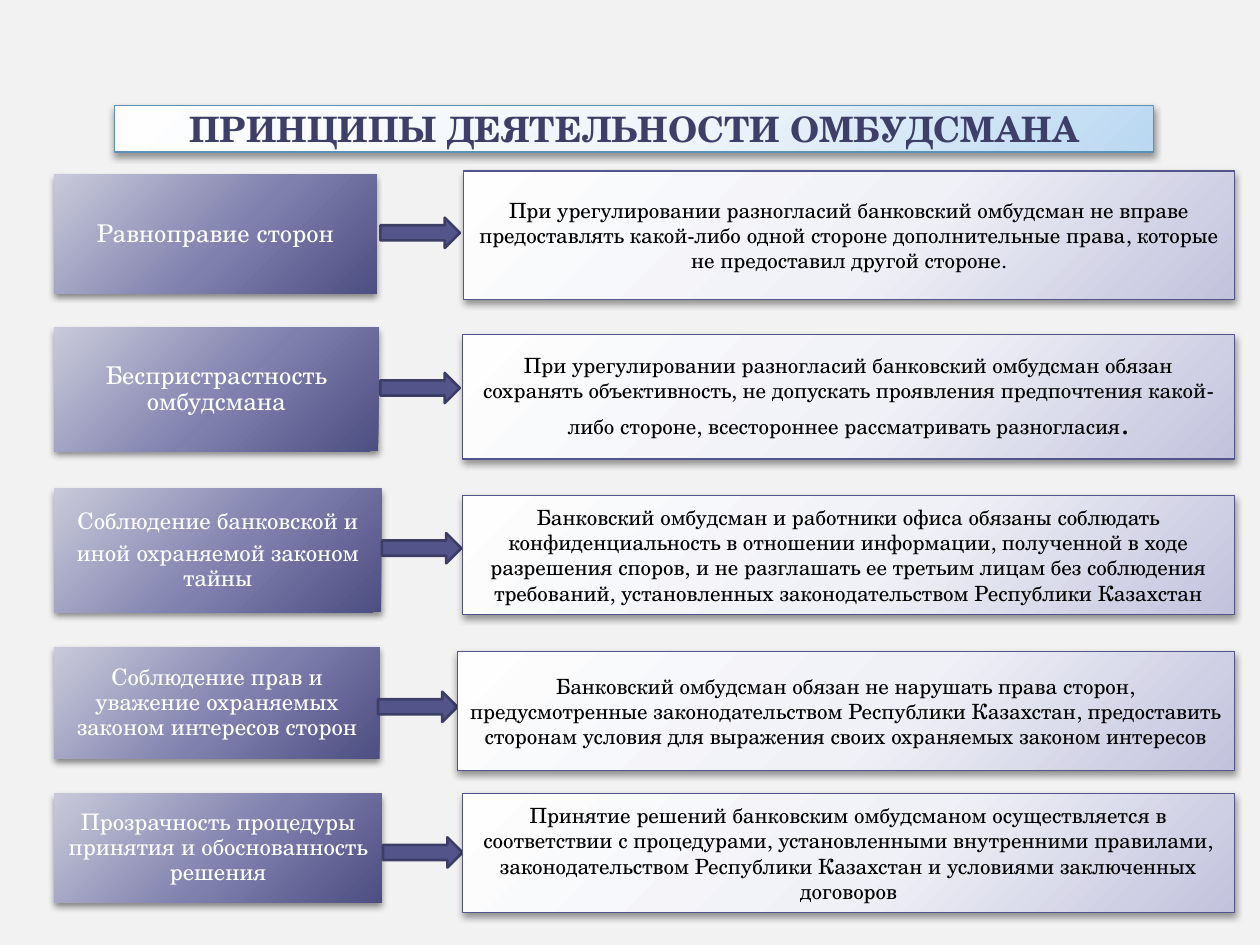
from pptx import Presentation
from pptx.dml.color import RGBColor
from pptx.enum.shapes import MSO_SHAPE as SHAPE
from pptx.enum.text import MSO_ANCHOR as ANCHOR, PP_ALIGN as ALIGN
from pptx.oxml import parse_xml
from pptx.oxml.ns import nsdecls
from pptx.util import Pt

FONT = "TeX Gyre Schola"
PAGE = RGBColor(0xF2, 0xF2, 0xF2)
WHITE = RGBColor(0xFF, 0xFF, 0xFF)
BLACK = RGBColor(0x00, 0x00, 0x00)
INK = RGBColor(0x3E, 0x3F, 0x68)
VIOLET = RGBColor(0x53, 0x54, 0x8A)
DEEP = RGBColor(0x3D, 0x3E, 0x66)
BLUE = RGBColor(0x5C, 0x92, 0xB5)
TITLE_GRAD = (RGBColor(0xFE, 0xFE, 0xFF), RGBColor(0xEF, 0xF5, 0xFB), RGBColor(0xBA, 0xD8, 0xF2))
LABEL_GRAD = (RGBColor(0xC9, 0xC9, 0xDA), RGBColor(0x7F, 0x80, 0xAE), RGBColor(0x4D, 0x4E, 0x81))
CARD_GRAD = (RGBColor(0xFE, 0xFE, 0xFE), RGBColor(0xF0, 0xF1, 0xF7), RGBColor(0xC2, 0xC2, 0xDD))

LABEL_LEFT, CARD_RIGHT = 31, 705.6
ARROW_SIZE = (45.4, 17.3)

ROWS = [
    {"label": ["Равноправие сторон"], "size": 14,
     "label_box": (100, 184.4, 67.8), "arrow": (217.4, 124.4), "card_box": (265, 97.7, 73.4),
     "card": [["При урегулировании разногласий банковский омбудсман не вправе предоставлять "
               "какой-либо одной стороне дополнительные права, которые не предоставил другой стороне."]]},
    {"label": ["Беспристрастность омбудсмана"], "size": 14,
     "label_box": (187.2, 185.3, 70.6), "arrow": (217.4, 213.1), "card_box": (264.4, 191, 71.3),
     "card": [["При урегулировании разногласий банковский омбудсман обязан"],
              ["сохранять объективность, не допускать проявления предпочтения какой-либо стороне, "
               "всестороннее рассматривать разногласия", "."]]},
    {"label": ["Соблюдение банковской и", "иной охраняемой законом тайны"], "size": 13,
     "label_box": (279.2, 186.8, 70.8), "arrow": (218.2, 304.6), "card_box": (264.4, 283.2, 67.8),
     "card": [["Банковский омбудсман и работники офиса обязаны соблюдать конфиденциальность "
               "в отношении информации, полученной в ходе разрешения споров, и не разглашать ее "
               "третьим лицам без соблюдения требований, установленных законодательством "
               "Республики Казахстан"]]},
    {"label": ["Соблюдение прав и уважение охраняемых законом интересов сторон"], "size": 13,
     "label_box": (370, 186, 63.6), "arrow": (216, 395.3), "card_box": (261.4, 372.5, 67.8),
     "card": [["Банковский омбудсман обязан не нарушать права сторон, предусмотренные "
               "законодательством Республики Казахстан, предоставить сторонам условия для "
               "выражения своих охраняемых законом интересов"]]},
    {"label": ["Прозрачность процедуры принятия и обоснованность решения"], "size": 13,
     "label_box": (453.6, 187.2, 62.2), "arrow": (218.9, 478.5), "card_box": (264.4, 453.6, 67.8),
     "card": [["Принятие решений банковским омбудсманом осуществляется в соответствии с процедурами, "
               "установленными внутренними правилами, законодательством Республики Казахстан "
               "и условиями заключенных договоров"]]},
]


class Deck:
    """Holds the style and the current slide, and draws each kind of element."""

    def __init__(self, prs):
        self.s = prs.slides.add_slide(prs.slide_layouts[6])
        self.s.background.fill.solid()
        self.s.background.fill.fore_color.rgb = PAGE

    def shape(self, kind, box, line=None, width=0.75):
        sp = self.s.shapes.add_shape(kind, *map(Pt, box))
        sp.shadow.inherit = False
        if line is None:
            sp.line.fill.background()
        else:
            sp.line.color.rgb = line
            sp.line.width = Pt(width)
        return sp

    def gradient(self, sp, colors):
        stops = "".join(f'<a:gs pos="{pos}000"><a:srgbClr val="{c}"/></a:gs>'
                        for pos, c in zip((0, 55, 100), colors))
        sp.fill.background()
        pr = sp._element.spPr
        pr.replace(pr.find("{*}noFill"), parse_xml(
            f'<a:gradFill {nsdecls("a")} rotWithShape="1"><a:gsLst>{stops}</a:gsLst>'
            '<a:path path="circle"><a:fillToRect l="-40000" t="-90000" r="140000" b="190000"/>'
            '</a:path></a:gradFill>'))

    def shadow(self, sp, alpha):
        sp._element.spPr.find("{*}effectLst").append(parse_xml(
            f'<a:outerShdw {nsdecls("a")} blurRad="{Pt(4)}" dist="{Pt(2)}" dir="5400000" '
            f'rotWithShape="0"><a:srgbClr val="{BLACK}"><a:alpha val="{alpha}000"/>'
            '</a:srgbClr></a:outerShdw>'))

    def text(self, sp, paragraphs, font, para=None, frame=None):
        tf = sp.text_frame
        for k, v in {"word_wrap": True, "vertical_anchor": ANCHOR.MIDDLE, **(frame or {})}.items():
            setattr(tf, k, v)
        for i, runs in enumerate(paragraphs):
            p = tf.add_paragraph() if i else tf.paragraphs[0]
            for k, v in {"alignment": ALIGN.CENTER, **(para or {})}.items():
                setattr(p, k, v)
            for text in runs:
                r = p.add_run()
                r.text = text
                r.font.name = FONT
                r.font.color.rgb = font["color"]
                r.font.size = Pt(18 if text == "." else font["size"])
                r.font.bold = font.get("bold", False)

    def panel(self, box, colors, line=None, alpha=40):
        sp = self.shape(SHAPE.RECTANGLE, box, line)
        self.gradient(sp, colors)
        self.shadow(sp, alpha)
        return sp

    def title(self, text, box):
        sp = self.panel(box, TITLE_GRAD, BLUE)
        self.text(sp, [[text]], {"size": 20, "color": INK, "bold": True})

    def label(self, lines, size, top, width, height):
        sp = self.panel((LABEL_LEFT, top, width, height), LABEL_GRAD, alpha=45)
        sides = ("left", "right", "top", "bottom")
        self.text(sp, [[t] for t in lines], {"size": size, "color": WHITE},
                  {"line_spacing": 0.9, "space_after": Pt(4)},
                  {f"margin_{side}": Pt(4) for side in sides})

    def arrow(self, left, top):
        sp = self.shape(SHAPE.RIGHT_ARROW, (left, top, *ARROW_SIZE), DEEP, 1.5)
        sp.fill.solid()
        sp.fill.fore_color.rgb = VIOLET

    def card(self, paragraphs, left, top, height):
        sp = self.panel((left, top, CARD_RIGHT - left, height), CARD_GRAD, VIOLET)
        self.text(sp, paragraphs, {"size": 12, "color": BLACK})


def main():
    prs = Presentation()
    prs.slide_width, prs.slide_height = Pt(720), Pt(540)
    deck = Deck(prs)
    deck.title("ПРИНЦИПЫ ДЕЯТЕЛЬНОСТИ ОМБУДСМАНА", (65.3, 60.4, 594, 26.5))
    for row in ROWS:
        deck.label(row["label"], row["size"], *row["label_box"])
        deck.arrow(*row["arrow"])
        deck.card(row["card"], *row["card_box"])
    prs.save("out.pptx")


if __name__ == "__main__":
    main()
